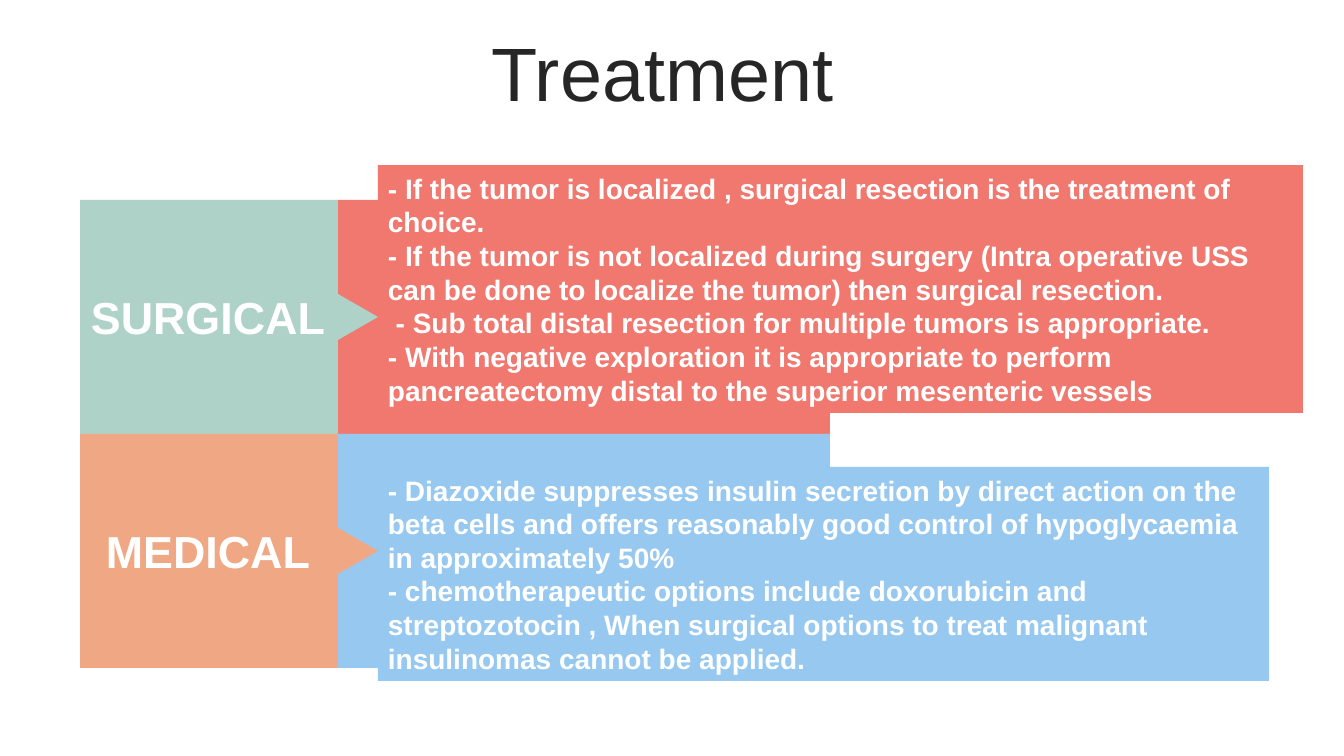
from pptx import Presentation
from pptx.dml.color import RGBColor
from pptx.enum import shapes, text
from pptx.util import Pt

WHITE = RGBColor(0xFF, 0xFF, 0xFF)
INK = RGBColor(0x26, 0x26, 0x26)
CORAL = RGBColor(0xF0, 0x78, 0x6E)
BLUE = RGBColor(0x96, 0xC8, 0xF0)
MINT = RGBColor(0xAF, 0xD2, 0xC8)
ORANGE = RGBColor(0xF0, 0xA8, 0x84)

PAGE_W, PAGE_H = 1344, 756
SCALE = 12192000 / PAGE_W  # EMU in one px

# Tag column, its arrow tip, and the band behind the panels
TAG_LEFT, TAG_RIGHT, TIP, BAND_RIGHT = 80, 338, 378, 830
ROWS_TOP, ROW_H, NOTCH = 200, 234, 23

TREATMENTS = [
    ("SURGICAL", MINT, CORAL, (165, 925, 248), [
        "- If the tumor is localized , surgical resection is the treatment of choice.",
        "- If the tumor is not localized during surgery (Intra operative USS can be done "
        "to localize the tumor) then surgical resection.",
        " - Sub total distal resection for multiple tumors is appropriate.",
        "- With negative exploration it is appropriate to perform pancreatectomy distal "
        "to the superior mesenteric vessels",
    ]),
    ("MEDICAL", ORANGE, BLUE, (467, 891, 214), [
        "- Diazoxide suppresses insulin secretion by direct action on the beta cells and "
        "offers reasonably good control of hypoglycaemia in approximately 50%",
        "- chemotherapeutic options include doxorubicin and streptozotocin , When surgical "
        "options to treat malignant insulinomas cannot be applied.",
    ]),
]


def emu(px):
    return round(px * SCALE)


class Painter:
    def __init__(self, page):
        self.page = page
        self.font = "Arial"

    def paint(self, shape, color):
        shape.shadow.inherit = False
        shape.fill.solid()
        shape.fill.fore_color.rgb = color
        shape.line.fill.background()

    def set_text(self, box, lines, size, color, bold, layout):
        frame = box.text_frame
        frame.word_wrap = True
        frame.auto_size = text.MSO_AUTO_SIZE.NONE
        frame.vertical_anchor = text.MSO_ANCHOR.MIDDLE
        frame.text = "\n".join(lines)
        font_style = {"name": self.font, "size": Pt(size), "bold": bold}
        for para in frame.paragraphs:
            for name, value in layout.items():
                setattr(para, name, value)
            for span in para.runs:
                for name, value in font_style.items():
                    setattr(span.font, name, value)
                span.font.color.rgb = color

    def title(self, words, left, top, width, height):
        box = self.page.shapes.title
        place = {"left": left, "top": top, "width": width, "height": height}
        for name, value in place.items():
            setattr(box, name, emu(value))
        self.set_text(box, [words], 54, INK, False, {
            "alignment": text.PP_ALIGN.CENTER, "line_spacing": 0.9, "space_before": Pt(10)})

    def rectangle(self, left, top, width, height, color):
        box = self.page.shapes.add_shape(
            shapes.MSO_SHAPE.RECTANGLE, *map(emu, (left, top, width, height)))
        self.paint(box, color)
        return box

    def tag(self, top, color):
        middle, bottom = top + ROW_H // 2, top + ROW_H
        outline = self.page.shapes.build_freeform(TAG_LEFT, top, scale=SCALE)
        outline.add_line_segments([
            (TAG_RIGHT, top), (TAG_RIGHT, middle - NOTCH), (TIP, middle),
            (TAG_RIGHT, middle + NOTCH), (TAG_RIGHT, bottom), (TAG_LEFT, bottom)])
        self.paint(outline.convert_to_shape(), color)

    def label(self, words, left, top, width, height):
        box = self.page.shapes.add_textbox(*map(emu, (left, top, width, height)))
        box.text_frame.margin_left = emu(12)
        self.set_text(box, [words], 32, WHITE, True, {
            "alignment": text.PP_ALIGN.CENTER, "space_before": Pt(6)})

    def panel(self, lines, left, top, width, height, color):
        box = self.rectangle(left, top, width, height, color)
        self.set_text(box, lines, 20, WHITE, True, {"alignment": text.PP_ALIGN.LEFT})


def main():
    deck = Presentation()
    deck.slide_width, deck.slide_height = emu(PAGE_W), emu(PAGE_H)
    painter = Painter(deck.slides.add_slide(deck.slide_layouts[5]))

    painter.title("Treatment ", 35, 37, 1276, 80)

    # One row per treatment: band, arrow tag, label and text panel
    for row, (name, tag_color, color, (top, width, height), lines) in enumerate(TREATMENTS):
        row_top = ROWS_TOP + row * ROW_H
        painter.rectangle(TAG_RIGHT, row_top, BAND_RIGHT - TAG_RIGHT, ROW_H, color)
        painter.tag(row_top, tag_color)
        painter.label(name, 64, row_top + 101, 286, 32)
        painter.panel(lines, TIP, top, width, height, color)

    deck.save("out.pptx")


if __name__ == "__main__":
    main()
